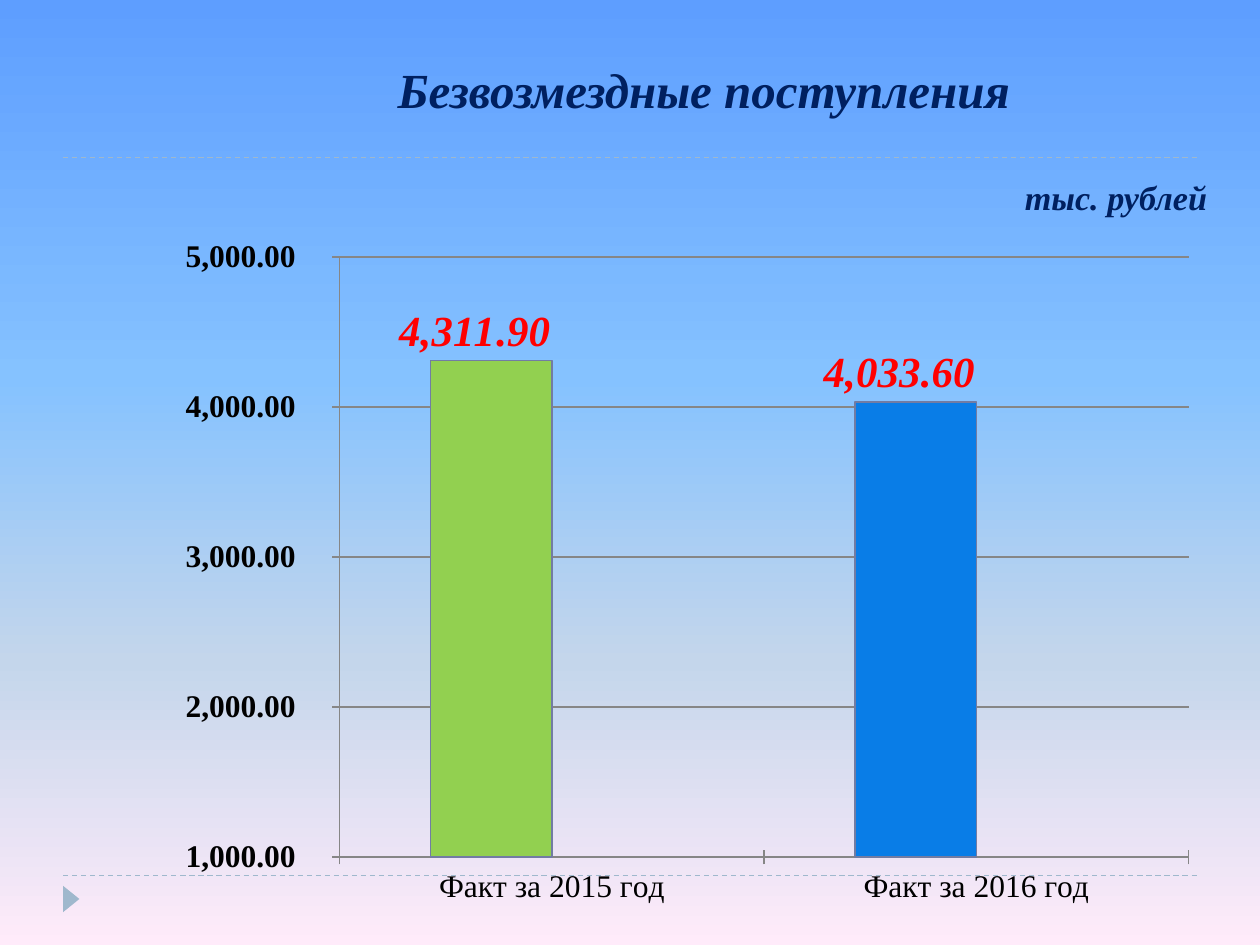
"""Build the slide comparing gratuitous receipts of 2015 and 2016."""
from dataclasses import dataclass

from lxml import etree
from pptx import Presentation
from pptx import util as u
from pptx.chart import data as chart_data
from pptx.dml.color import RGBColor
from pptx.enum import chart as ch
from pptx.enum import dml, shapes, text
from pptx.oxml import ns

NAVY = RGBColor(0x00, 0x20, 0x60)
BLACK = RGBColor(0x00, 0x00, 0x00)
RED = RGBColor(0xFF, 0x00, 0x00)
GRAY = RGBColor(0x86, 0x86, 0x86)
GREEN = RGBColor(0x92, 0xD0, 0x50)
BLUE = RGBColor(0x09, 0x7D, 0xE7)
SLATE = RGBColor(0x72, 0x7C, 0xA3)
MIST = RGBColor(0x9F, 0xB8, 0xCD)
SKY = {
    0: RGBColor(0x5E, 0x9E, 0xFF),
    40: RGBColor(0x85, 0xC2, 0xFF),
    70: RGBColor(0xC4, 0xD6, 0xEB),
    100: RGBColor(0xFF, 0xEB, 0xFA),
}
SERIF = "Times New Roman"
MONEY = r"_-* #,##0.00_р_._-;\-* #,##0.00_р_._-;_-"


@dataclass
class Caption:
    wording: str
    left: float
    top: float
    width: float
    height: float
    size: float
    align: text.PP_ALIGN
    anchor: text.MSO_ANCHOR


@dataclass
class Year:
    label: str
    receipts: float
    color: RGBColor
    label_shift: float


CAPTIONS = [
    Caption("Безвозмездные поступления", 1.17, 0.31, 8.83, 0.68, 28,
            text.PP_ALIGN.CENTER, text.MSO_ANCHOR.BOTTOM),
    Caption("тыс. рублей", 7.89, 1.33, 1.79, 0.47, 19.5,
            text.PP_ALIGN.RIGHT, text.MSO_ANCHOR.MIDDLE),
]
YEARS = [
    Year("Факт за 2015 год", 4311.9, GREEN, -0.04),
    Year("Факт за 2016 год", 4033.6, BLUE, -0.04),
]


def add_xml(parent, tag: str, **attributes):
    return etree.SubElement(parent, ns.qn(tag), attributes)


def paint_sky(slide) -> None:
    fill = slide.background.fill
    fill.gradient()
    fill.gradient_angle = 270
    stops = next(slide.element.iter(ns.qn("a:gsLst")))
    for stop in list(stops):
        stops.remove(stop)
    for percent, color in SKY.items():
        stop = add_xml(stops, "a:gs", pos=str(percent * 1000))
        add_xml(stop, "a:srgbClr", val=str(color))


def add_rule(slide, y: float) -> None:
    rule = slide.shapes.add_connector(
        shapes.MSO_CONNECTOR.STRAIGHT, u.Inches(0.5), u.Inches(y), u.Inches(9.5), u.Inches(y))
    rule.line.color.rgb = MIST
    rule.line.width = u.Pt(0.75)
    rule.line.dash_style = dml.MSO_LINE.DASH
    add_xml(rule.element.spPr, "a:effectLst")


def add_marker(slide) -> None:
    marker = slide.shapes.add_shape(
        shapes.MSO_SHAPE.ISOSCELES_TRIANGLE,
        u.Inches(0.46), u.Inches(7.07), u.Inches(0.21), u.Inches(0.13))
    marker.rotation = 90
    marker.shadow.inherit = False
    marker.fill.solid()
    marker.fill.fore_color.rgb = MIST
    marker.line.fill.background()


def style_font(font, size: float, color: RGBColor, bold: bool = False,
               italic: bool = False, name: str = SERIF) -> None:
    font.name, font.size = name, u.Pt(size)
    font.bold, font.italic = bold, italic
    font.color.rgb = color


def add_caption(slide, caption: Caption) -> None:
    box = slide.shapes.add_textbox(u.Inches(caption.left), u.Inches(caption.top),
                                   u.Inches(caption.width), u.Inches(caption.height))
    frame = box.text_frame
    frame.word_wrap = True
    frame.vertical_anchor = caption.anchor
    paragraph = frame.paragraphs[0]
    paragraph.text = caption.wording
    paragraph.alignment = caption.align
    style_font(paragraph.font, caption.size, NAVY, bold=True, italic=True)


def place(layout, **settings) -> None:
    manual = add_xml(layout, "c:manualLayout")
    for key, value in settings.items():
        add_xml(manual, f"c:{key}", val=str(value))


def style_axis(axis, bold: bool) -> None:
    axis.major_tick_mark = ch.XL_TICK_MARK.CROSS
    axis.minor_tick_mark = ch.XL_TICK_MARK.NONE
    axis.format.line.color.rgb = GRAY
    axis.format.line.width = u.Pt(0.75)
    style_font(axis.tick_labels.font, 18, BLACK, bold=bold)


def style_year(point, year: Year) -> None:
    point.format.fill.solid()
    point.format.fill.fore_color.rgb = year.color
    point.format.line.color.rgb = SLATE
    point.format.line.width = u.Pt(0.75)
    label = point.data_label
    style_font(label.font, 24.5, RED, bold=True, italic=True)
    label.position = ch.XL_LABEL_POSITION.OUTSIDE_END
    layout = etree.Element(ns.qn("c:layout"))
    place(layout, x=0, y=year.label_shift)
    label.font._element.getparent().getparent().getparent().insert(1, layout)


def add_receipts_chart(slide) -> None:
    receipts = chart_data.CategoryChartData(number_format=MONEY)
    receipts.categories = [year.label for year in YEARS]
    receipts.add_series("Series 1", [year.receipts for year in YEARS])
    receipts.add_series("Series 2", [None for _ in YEARS])
    chart = slide.shapes.add_chart(
        ch.XL_CHART_TYPE.COLUMN_CLUSTERED, u.Inches(1.25), u.Inches(1.8),
        u.Inches(8.36), u.Inches(5.48), receipts).chart
    chart.has_legend = False
    chart.has_title = False
    style_font(chart.font, 18, BLACK, name="Cabin")

    plot = chart.plots[0]
    plot.vary_by_categories = False
    plot.gap_width, plot.overlap = 150, 0
    for series, color in zip(plot.series, (SLATE, MIST)):
        series.format.fill.solid()
        series.format.fill.fore_color.rgb = color
        series.invert_if_negative = False
    for index, year in enumerate(YEARS):
        style_year(plot.series[0].points[index], year)

    style_axis(chart.category_axis, bold=False)
    amounts = chart.value_axis
    style_axis(amounts, bold=True)
    amounts.minimum_scale, amounts.maximum_scale, amounts.major_unit = 1000, 5000, 1000
    amounts.tick_labels.number_format = MONEY
    amounts.tick_labels.number_format_is_linked = False
    amounts.has_major_gridlines = True
    amounts.major_gridlines.format.line.color.rgb = GRAY
    amounts.major_gridlines.format.line.width = u.Pt(0.75)

    area = next(chart.element.iter(ns.qn("c:plotArea")))
    for automatic in area.findall(ns.qn("c:layout")):
        area.remove(automatic)
    layout = etree.Element(ns.qn("c:layout"))
    area.insert(0, layout)
    place(layout, layoutTarget="inner", xMode="edge", yMode="edge",
          x=0.173, y=0.044, w=0.806, h=0.869)


def main() -> None:
    deck = Presentation()
    deck.slide_width, deck.slide_height = u.Inches(10), u.Inches(7.5)
    slide = deck.slides.add_slide(deck.slide_layouts[6])
    paint_sky(slide)
    for y in (6.95, 1.25):
        add_rule(slide, y)
    add_marker(slide)
    add_receipts_chart(slide)
    for caption in CAPTIONS:
        add_caption(slide, caption)
    deck.save("out.pptx")


if __name__ == "__main__":
    main()
